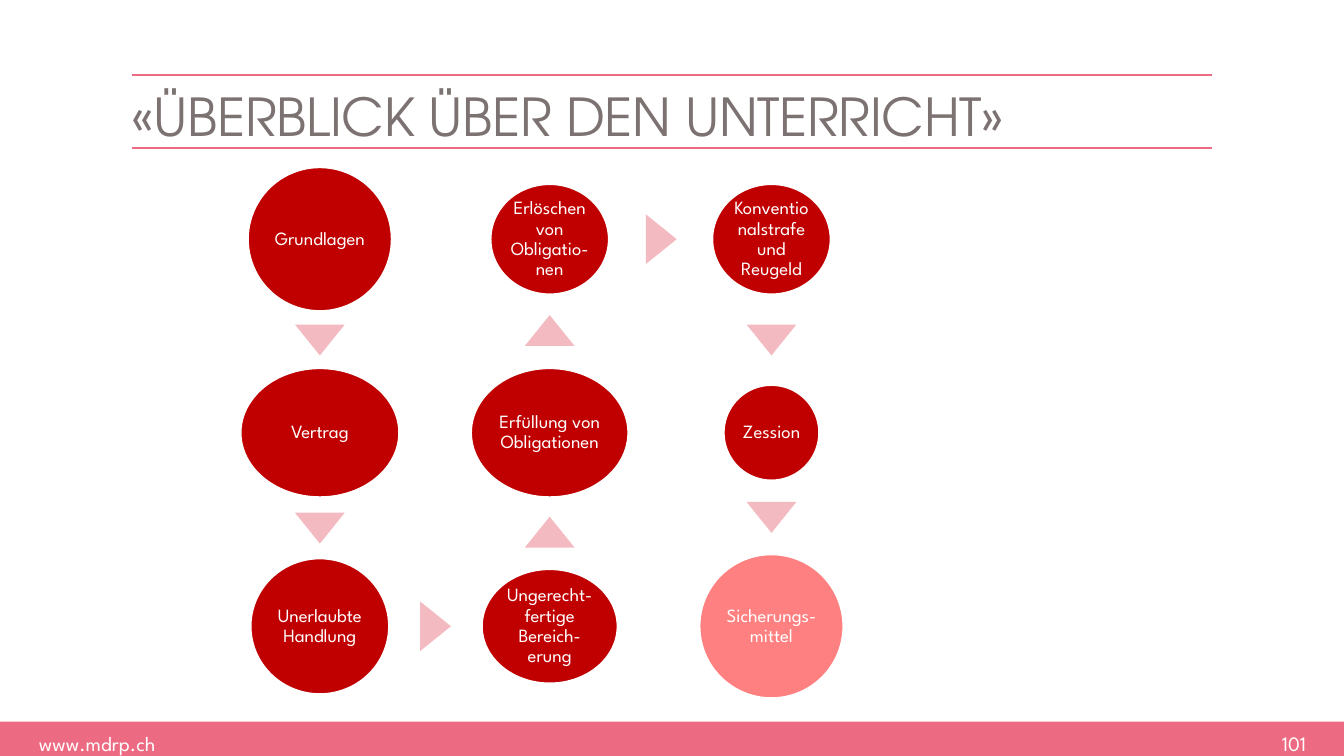
from lxml import etree
from pptx import Presentation
from pptx.dml.color import RGBColor
from pptx.enum.shapes import MSO_CONNECTOR, MSO_SHAPE
from pptx.enum.text import MSO_ANCHOR, MSO_AUTO_SIZE, PP_ALIGN
from pptx.oxml.ns import qn
from pptx.util import Inches, Pt

OVAL, TRIANGLE, RECTANGLE = MSO_SHAPE.OVAL, MSO_SHAPE.ISOSCELES_TRIANGLE, MSO_SHAPE.RECTANGLE
STRAIGHT = MSO_CONNECTOR.STRAIGHT
TOP, MIDDLE = MSO_ANCHOR.TOP, MSO_ANCHOR.MIDDLE
LEFT, CENTER, RIGHT = PP_ALIGN.LEFT, PP_ALIGN.CENTER, PP_ALIGN.RIGHT
NO_AUTOFIT = MSO_AUTO_SIZE.NONE

WHITE = RGBColor(0xFF, 0xFF, 0xFF)
PINK = RGBColor(0xED, 0x6B, 0x82)
PALE_PINK = RGBColor(0xF4, 0xBA, 0xC1)
RED = RGBColor(0xC0, 0x00, 0x00)
LIGHT_RED = RGBColor(0xFF, 0x80, 0x80)
GRAY = RGBColor(0x7B, 0x72, 0x71)
BODY_FONT = "League Spartan"
TITLE_FONT = "TeX Gyre Adventor"


def add_filled_shape(kind, center_x, center_y, width, height, color):
    shape = slide.shapes.add_shape(
        kind, Inches(center_x - width / 2), Inches(center_y - height / 2),
        Inches(width), Inches(height))
    shape.shadow.inherit = False
    shape.fill.solid()
    shape.fill.fore_color.rgb = color
    shape.line.fill.background()
    return shape


def set_text(shape, text, font, size, color, alignment, anchor=TOP, inset=0, spacing=1.0):
    frame = shape.text_frame
    frame.word_wrap = True
    frame.auto_size = NO_AUTOFIT
    frame.vertical_anchor = anchor
    frame.margin_left = frame.margin_right = Inches(inset)
    frame.margin_top = frame.margin_bottom = Inches(inset)
    frame.text = text
    paragraph = frame.paragraphs[0]
    paragraph.alignment = alignment
    paragraph.line_spacing = spacing
    paragraph.font.name = font
    paragraph.font.size = Pt(size)
    paragraph.font.color.rgb = color


# Widescreen slide, 16 to 9
presentation = Presentation()
presentation.slide_width = Inches(10)
presentation.slide_height = Inches(10 * 9 / 16)
slide = presentation.slides.add_slide(presentation.slide_layouts[5])

# Footer band with web address and page number
add_filled_shape(RECTANGLE, 5, 5.5, 10, 0.26, PINK)
for text, left, width, alignment in [("www.mdrp.ch", 0.29, 1.02, LEFT),
                                     ("101", 9.11, 0.61, RIGHT)]:
    footer = slide.shapes.add_textbox(Inches(left), Inches(5.44), Inches(width), Inches(0.18))
    set_text(footer, text, BODY_FONT, 11, WHITE, alignment)

# Title between two rules
for y in (0.56, 1.1):
    rule = slide.shapes.add_connector(STRAIGHT, Inches(0.98), Inches(y), Inches(9.02), Inches(y))
    rule.line.color.rgb = PINK
    rule.line.width = Pt(1)
    etree.SubElement(rule._element.spPr, qn("a:effectLst"))

title = slide.shapes.title
title.left, title.top = Inches(0.98), Inches(0.56)
title.width, title.height = Inches(8.03), Inches(0.52)
set_text(title, "«ÜBERBLICK ÜBER DEN UNTERRICHT»", TITLE_FONT, 28, GRAY, LEFT, spacing=1.14)
title.text_frame.paragraphs[0].runs[0]._r.get_or_add_rPr().set("spc", "-10")

# Topics on a grid of three columns and three rows
columns = [2.38, 4.09, 5.74]
rows = [1.78 + 1.44 * index for index in range(3)]
topics = [
    ("Grundlagen", 0, 0, 1.07, 1.07, RED),
    ("Vertrag", 0, 1, 1.18, 0.96, RED),
    ("Unerlaubte Handlung", 0, 2, 1.03, 1.01, RED),
    ("Ungerecht-fertige Bereich-erung", 1, 2, 1.01, 0.85, RED),
    ("Erfüllung von Obligationen", 1, 1, 1.17, 0.96, RED),
    ("Erlöschen von Obligatio-nen", 1, 0, 0.88, 0.82, RED),
    ("Konventionalstrafe und Reugeld", 2, 0, 0.88, 0.82, RED),
    ("Zession", 2, 1, 0.71, 0.71, RED),
    ("Sicherungs-mittel", 2, 2, 1.07, 1.07, LIGHT_RED),
]
for text, column, row, width, height, color in topics:
    topic = add_filled_shape(OVAL, columns[column], rows[row], width, height, color)
    topic.line.color.rgb = WHITE
    topic.line.width = Pt(1)
    set_text(topic, text, BODY_FONT, 10, WHITE, CENTER, MIDDLE, 0.01, 0.9)

# Triangles pointing to the next topic
UP, TO_RIGHT, DOWN = 0, 90, 180
triangles = [
    (columns[0], 2.53, DOWN), (columns[0], 3.93, DOWN), (3.24, rows[2], TO_RIGHT),
    (columns[1], 3.96, UP), (columns[1], 2.46, UP), (4.92, rows[0], TO_RIGHT),
    (columns[2], 2.53, DOWN), (columns[2], 3.85, DOWN),
]
for x, y, rotation in triangles:
    triangle = add_filled_shape(TRIANGLE, x, y, 0.37, 0.23, PALE_PINK)
    triangle.rotation = rotation

presentation.save("out.pptx")
